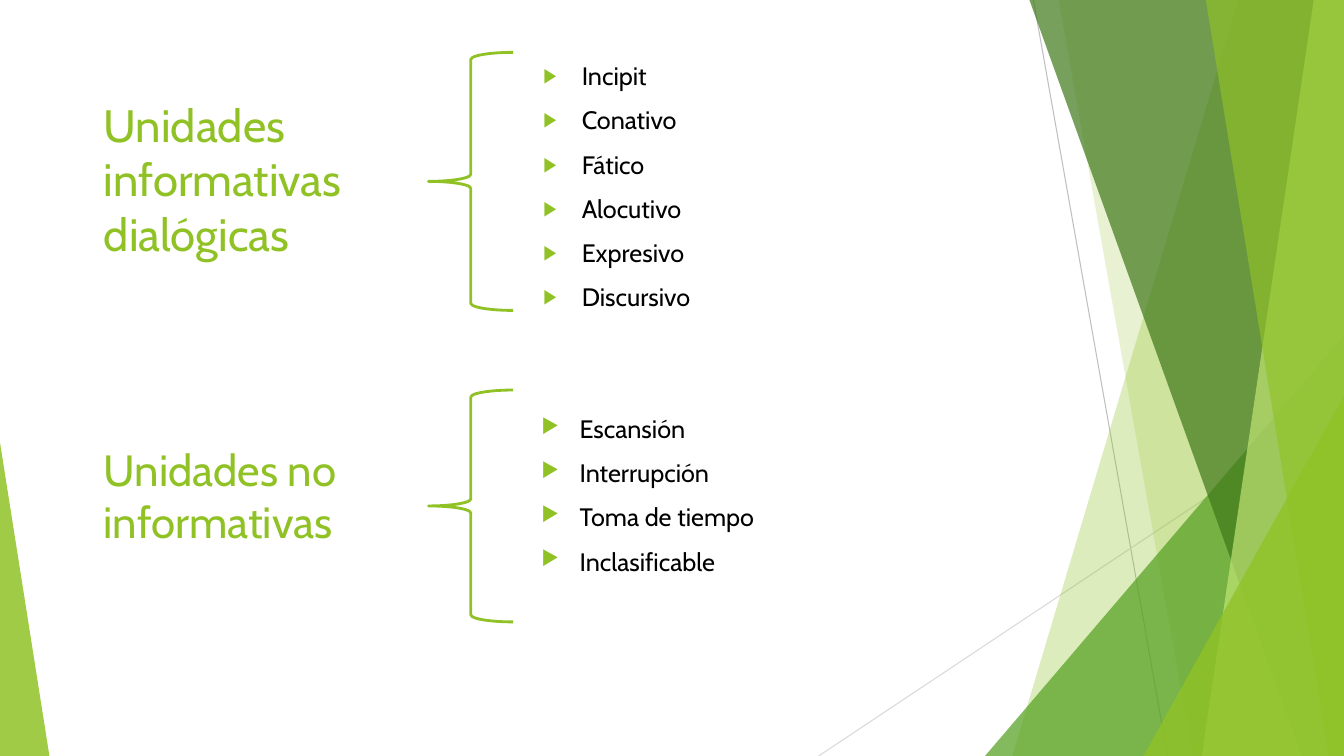
"""Build the slide on dialogic and non-informative units with its green facets."""
from dataclasses import dataclass

from lxml.etree import SubElement
from pptx import Presentation
from pptx.dml.color import RGBColor
from pptx.enum.shapes import MSO_CONNECTOR, MSO_SHAPE as SHAPE
from pptx.enum.text import MSO_ANCHOR as ANCHOR, MSO_AUTO_SIZE as AUTO_SIZE, PP_ALIGN as ALIGN
from pptx.oxml.ns import qn
from pptx.util import Inches, Pt

GREEN = "90C226"
BLACK = "000000"
FRAME = {"word_wrap": True, "auto_size": AUTO_SIZE.NONE, "vertical_anchor": ANCHOR.TOP}
LIST_INDENT = 0.38
BRACE_LEFT, BRACE_WIDTH = 4.25, 0.84
WIDTH, HEIGHT = 13.33, 7.5


@dataclass
class Box:
    left: float
    top: float
    width: float
    height: float

    def lengths(self) -> list:
        return [Inches(n) for n in (self.left, self.top, self.width, self.height)]


@dataclass
class Facet:
    """A translucent band, given by its corners."""
    corners: list
    color: str
    opacity: int


@dataclass
class Wedge:
    """A translucent triangle whose apex stands at one end of its box."""
    box: Box
    apex: float
    color: str
    opacity: int


@dataclass
class Ray:
    start: tuple
    end: tuple
    color: str


@dataclass
class Unit:
    """A heading, a brace and the list that the brace opens."""
    heading: str
    heading_box: Box
    heading_size: float
    heading_align: ALIGN
    brace_top: float
    brace_height: float
    items: list
    items_box: Box


def band(top_left: float, bottom_left: float, color: str, opacity: int) -> Facet:
    """Return a facet that reaches from a slanted left edge to the slide's right edge."""
    corners = [(top_left, 0), (WIDTH, 0), (WIDTH, HEIGHT), (bottom_left, HEIGHT)]
    return Facet(corners, color, opacity)


DECOR = [
    Ray((10.25, 0), (11.58, 7.5), "BFBFBF"),
    Ray((13.33, 4.03), (8.12, 7.5), "D9D9D9"),
    band(12.28, 10.04, GREEN, 30),
    band(10.5, 11.83, GREEN, 20),
    Wedge(Box(9.77, 3.33, 3.56, 4.17), 1, "54A021", 72),
    band(10.21, 12.91, "3F7819", 70),
    band(13.03, 11.92, "C0E474", 70),
    band(11.96, 13.18, GREEN, 65),
    Wedge(Box(11.34, 3.93, 1.99, 3.57), 1, GREEN, 80),
    Wedge(Box(0, 4.39, 0.49, 3.11), 0, GREEN, 85),
]

DIALOGIC = Unit(
    "Unidades informativas dialógicas", Box(0.93, 0.91, 3.74, 1.84), 32.4, ALIGN.JUSTIFY,
    0.52, 2.56,
    ["Incipit", "Conativo", "Fático", "Alocutivo", "Expresivo", "Discursivo"],
    Box(5.29, 0.55, 4.64, 2.56),
)
NON_INFORMATIVE = Unit(
    "Unidades no informativas", Box(0.93, 4.34, 3.13, 1.84), 31.2, ALIGN.LEFT,
    3.87, 2.3,
    ["Escansión", "Interrupción", "Toma de tiempo", "Inclasificable"],
    Box(5.27, 4.05, 2.71, 1.95),
)


def rgb(color: str) -> RGBColor:
    return RGBColor.from_string(color)


def apply(target, values: dict) -> None:
    for name, value in values.items():
        setattr(target, name, value)


def paint(shape, color: str, opacity: int) -> None:
    """Fill a shape with a translucent colour, without outline or shadow."""
    shape.shadow.inherit = False
    shape.fill.solid()
    shape.fill.fore_color.rgb = rgb(color)
    fill_color = shape._element.spPr.find(qn("a:solidFill")).find(qn("a:srgbClr"))
    SubElement(fill_color, qn("a:alpha"), val=str(opacity * 1000))
    shape.line.fill.background()


def draw_decor(shapes, part) -> None:
    """Draw one ray, wedge or facet of the background."""
    if isinstance(part, Ray):
        ends = [Inches(n) for n in (*part.start, *part.end)]
        ray = shapes.add_connector(MSO_CONNECTOR.STRAIGHT, *ends)
        ray.line.color.rgb = rgb(part.color)
        ray.line.width = Pt(0.75)
        SubElement(ray._element.spPr, qn("a:effectLst"))
        return
    if isinstance(part, Wedge):
        shape = shapes.add_shape(SHAPE.ISOSCELES_TRIANGLE, *part.box.lengths())
        shape.adjustments[0] = part.apex
    else:
        first, *others = [(Inches(x), Inches(y)) for x, y in part.corners]
        outline = shapes.build_freeform(*first)
        outline.add_line_segments(others, close=True)
        shape = outline.convert_to_shape()
    paint(shape, part.color, part.opacity)


def place(shape, box: Box) -> None:
    """Move a text shape into its box and format its frame."""
    apply(shape, dict(zip(("left", "top", "width", "height"), box.lengths())))
    apply(shape.text_frame, FRAME)


def write(paragraph, text: str, size: float, color: str) -> None:
    run = paragraph.add_run()
    run.text = text
    apply(run.font, {"name": "Cabin", "size": Pt(size)})
    run.font.color.rgb = rgb(color)


def add_bullet(paragraph) -> None:
    """Give a paragraph a green arrowhead bullet and a hanging indent."""
    props = paragraph._p.get_or_add_pPr()
    props.set("marL", str(Inches(LIST_INDENT)))
    props.set("indent", str(-Inches(LIST_INDENT)))
    SubElement(SubElement(props, qn("a:buClr")), qn("a:srgbClr"), val=GREEN)
    SubElement(props, qn("a:buSzPct"), val="80000")
    SubElement(props, qn("a:buChar"), char="▶")


def draw_unit(shapes, unit: Unit, heading, listing) -> None:
    """Fill the heading and the list of a unit and draw the brace between them."""
    place(heading, unit.heading_box)
    title_line = heading.text_frame.paragraphs[0]
    title_line.alignment = unit.heading_align
    write(title_line, unit.heading, unit.heading_size, GREEN)

    brace_box = Box(BRACE_LEFT, unit.brace_top, BRACE_WIDTH, unit.brace_height)
    brace = shapes.add_shape(SHAPE.LEFT_BRACE, *brace_box.lengths())
    brace.shadow.inherit = False
    brace.fill.background()
    brace.line.color.rgb = rgb(GREEN)
    brace.line.width = Pt(2)

    place(listing, unit.items_box)
    frame = listing.text_frame
    for index, item in enumerate(unit.items):
        entry = frame.add_paragraph() if index else frame.paragraphs[0]
        add_bullet(entry)
        entry.space_before = Pt(10 if index else 0)
        write(entry, item, 18, BLACK)


def main() -> None:
    deck = Presentation()
    apply(deck, {"slide_width": Inches(WIDTH), "slide_height": Inches(HEIGHT)})
    slide = deck.slides.add_slide(deck.slide_layouts[1])
    shapes = slide.shapes

    backdrop = shapes.add_group_shape()
    for part in DECOR:
        draw_decor(backdrop.shapes, part)
    shapes.title._element.addprevious(backdrop._element)

    draw_unit(shapes, DIALOGIC, shapes.title, slide.placeholders[1])
    heading, listing = (
        shapes.add_textbox(*box.lengths())
        for box in (NON_INFORMATIVE.heading_box, NON_INFORMATIVE.items_box)
    )
    draw_unit(shapes, NON_INFORMATIVE, heading, listing)
    deck.save("out.pptx")


if __name__ == "__main__":
    main()
